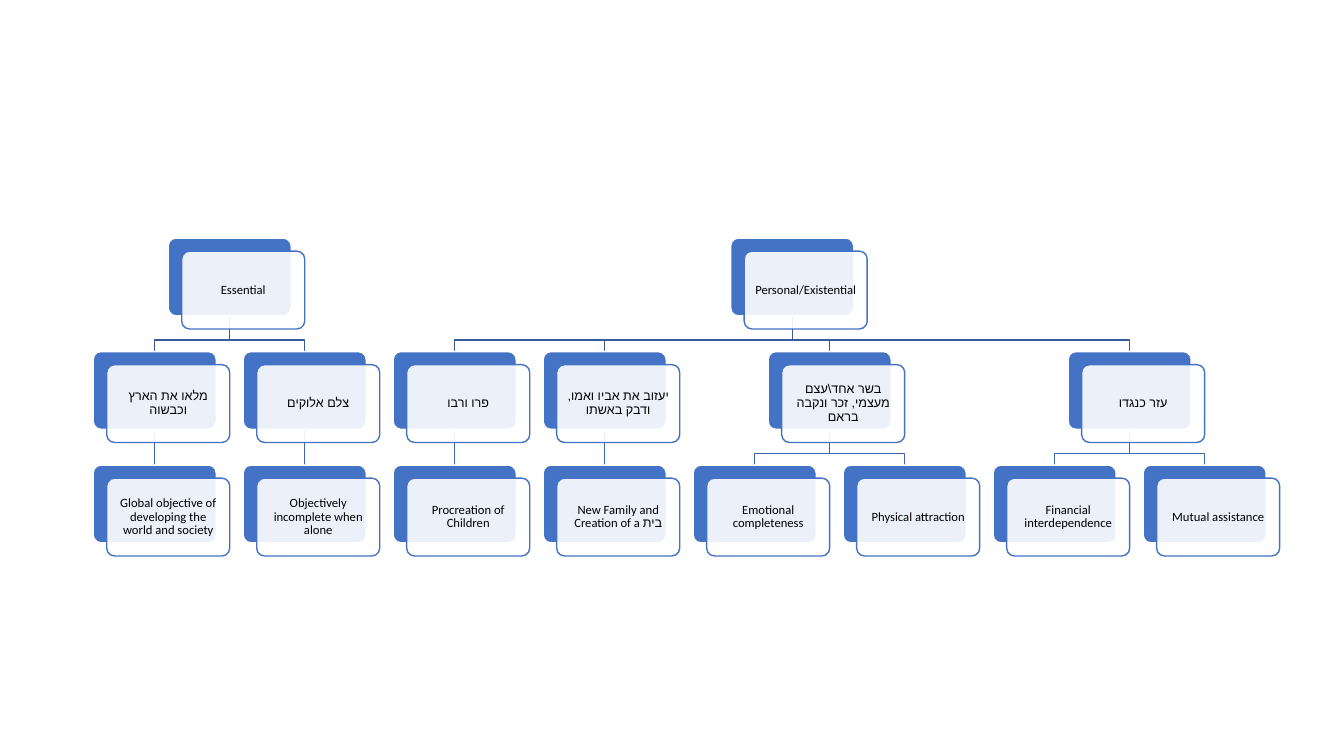
from dataclasses import dataclass, field
from itertools import count
from typing import Iterator

from lxml.etree import SubElement
from pptx import Presentation
from pptx.dml.color import RGBColor
from pptx.enum.shapes import MSO_CONNECTOR, MSO_SHAPE
from pptx.enum.text import MSO_ANCHOR, PP_ALIGN
from pptx.oxml.ns import qn
from pptx.shapes.autoshape import Shape
from pptx.shapes.connector import Connector
from pptx.shapes.shapetree import SlideShapes
from pptx.util import Cm, Pt


@dataclass(frozen=True)
class Theme:
    card: RGBColor = RGBColor(0x44, 0x72, 0xC4)
    paper: RGBColor = RGBColor(0xFF, 0xFF, 0xFF)
    ink: RGBColor = RGBColor(0, 0, 0)
    branches: tuple[RGBColor, ...] = (RGBColor(0x36, 0x5B, 0x9D), RGBColor(0x3E, 0x67, 0xB2))
    paper_opacity: int = 90
    latin_font: str = "Calibri"
    hebrew_font: str = "Arial"
    text_size: Pt = Pt(9)
    line_width: Pt = Pt(1)


@dataclass(frozen=True)
class Topic:
    label: str
    children: tuple["Topic", ...] = ()
    font: str = Theme.latin_font


@dataclass
class Node:
    """A topic with its place in the tree; lengths in centimetres."""
    topic: Topic
    level: int
    left: float
    children: list["Node"] = field(default_factory=list)

    @property
    def top(self) -> float:
        return FIRST_TOP + self.level * LEVEL_PITCH

    @property
    def center(self) -> float:
        return self.left + CARD_WIDTH / 2

    @property
    def bottom(self) -> float:
        return self.top + CARD_HEIGHT


THEME = Theme()
FIRST_LEFT, LEAF_PITCH = 2.35, 3.78
FIRST_TOP, LEVEL_PITCH = 6.0, 2.86
CARD_WIDTH, CARD_HEIGHT = 3.1, 1.96
FRONT_RIGHT, FRONT_DOWN = 0.34, 0.33
STEM = 0.61
INSET = 0.15

PURPOSES = (
    Topic("Essential", (
        Topic("מלאו את הארץ וכבשוה", (
            Topic("Global objective of developing the world and society"),
        ), font=THEME.hebrew_font),
        Topic("צלם אלוקים", (Topic("Objectively incomplete when alone"),)),
    )),
    Topic("Personal/Existential", (
        Topic("פרו ורבו", (Topic("Procreation of Children"),)),
        Topic("יעזוב את אביו ואמו, ודבק באשתו", (
            Topic("New Family and Creation of a בית"),
        )),
        Topic(r"בשר אחד\עצם מעצמי, זכר ונקבה בראם", (
            Topic("Emotional completeness"),
            Topic("Physical attraction"),
        )),
        Topic("עזר כנגדו", (
            Topic("Financial interdependence"),
            Topic("Mutual assistance"),
        )),
    )),
)


def place(topic: Topic, columns: Iterator[int], level: int = 0) -> Node:
    """Give each leaf the next column and centre each parent over its children."""
    children = [place(child, columns, level + 1) for child in topic.children]
    if children:
        left = (children[0].left + children[-1].left) / 2
    else:
        left = FIRST_LEFT + next(columns) * LEAF_PITCH
    return Node(topic, level, left, children)


def walk(node: Node) -> Iterator[Node]:
    yield node
    for child in node.children:
        yield from walk(child)


def draw_elbow(shapes: SlideShapes, parent: Node, child: Node) -> None:
    bus = parent.bottom + STEM
    builder = shapes.build_freeform(Cm(parent.center), Cm(parent.bottom))
    corners = ((parent.center, bus), (child.center, bus), (child.center, child.top))
    builder.add_line_segments([(Cm(x), Cm(y)) for x, y in corners], close=False)
    elbow = builder.convert_to_shape()
    elbow.shadow.inherit = False
    elbow.fill.background()
    elbow.line.color.rgb = THEME.branches[parent.level]
    elbow.line.width = THEME.line_width


def draw_drop(shapes: SlideShapes, parent: Node, child: Node) -> Connector:
    drop = shapes.add_connector(
        MSO_CONNECTOR.STRAIGHT,
        Cm(parent.center), Cm(parent.bottom), Cm(child.center), Cm(child.top),
    )
    drop.line.color.rgb = THEME.branches[parent.level]
    drop.line.width = THEME.line_width
    SubElement(drop._element.spPr, qn("a:effectLst"))
    return drop


def draw_card(shapes: SlideShapes, left: float, top: float, fill: RGBColor, edge: RGBColor) -> Shape:
    card = shapes.add_shape(
        MSO_SHAPE.ROUNDED_RECTANGLE, Cm(left), Cm(top), Cm(CARD_WIDTH), Cm(CARD_HEIGHT)
    )
    card.adjustments[0] = 0.1
    card.shadow.inherit = False
    card.fill.solid()
    card.fill.fore_color.rgb = fill
    card.line.color.rgb = edge
    card.line.width = THEME.line_width
    return card


def write_label(card: Shape, topic: Topic) -> None:
    frame = card.text_frame
    frame.word_wrap = True
    frame.vertical_anchor = MSO_ANCHOR.MIDDLE
    frame.margin_left = frame.margin_right = Cm(INSET)
    frame.margin_top = frame.margin_bottom = Cm(INSET)
    paragraph = frame.paragraphs[0]
    paragraph.alignment = PP_ALIGN.CENTER
    paragraph.line_spacing = 0.9
    paragraph.space_after = Pt(3)
    run = paragraph.add_run()
    run.text = topic.label
    run.font.size = THEME.text_size
    run.font.name = topic.font
    run.font.color.rgb = THEME.ink
    SubElement(run.font._element, qn("a:cs"), typeface=THEME.hebrew_font)


def draw_node(shapes: SlideShapes, node: Node) -> Shape:
    """Draw the two stacked cards and return the back one, which holds the branches."""
    back = draw_card(shapes, node.left, node.top, THEME.card, THEME.paper)
    front = draw_card(
        shapes, node.left + FRONT_RIGHT, node.top + FRONT_DOWN, THEME.paper, THEME.card
    )
    paper = front.fill._xPr.find(qn("a:solidFill"))[0]
    SubElement(paper, qn("a:alpha"), val=str(THEME.paper_opacity * 1000))
    write_label(front, node.topic)
    return back


def main() -> None:
    presentation = Presentation()
    presentation.slide_width, presentation.slide_height = Cm(33.87), Cm(19.05)
    shapes = presentation.slides.add_slide(presentation.slide_layouts[6]).shapes

    columns = count()
    nodes = [node for purpose in PURPOSES for node in walk(place(purpose, columns))]

    drops: list[tuple[Connector, Node, Node]] = []
    for parent in nodes:
        for child in parent.children:
            if len(parent.children) == 1:
                drops.append((draw_drop(shapes, parent, child), parent, child))
            else:
                draw_elbow(shapes, parent, child)

    back_cards = {id(node): draw_node(shapes, node) for node in nodes}
    for drop, parent, child in drops:
        drop.begin_connect(back_cards[id(parent)], 2)
        drop.end_connect(back_cards[id(child)], 0)

    presentation.save("out.pptx")


if __name__ == "__main__":
    main()
